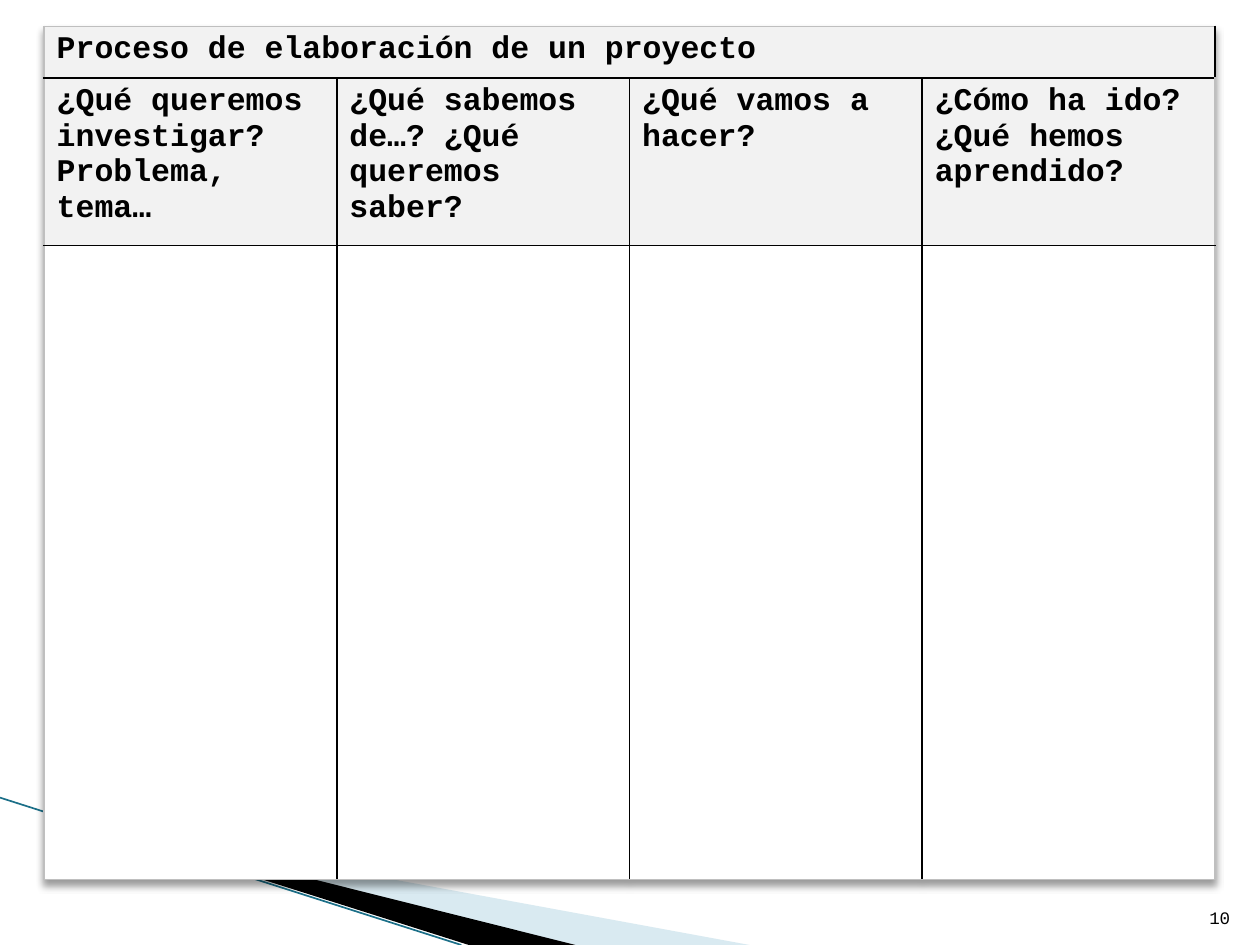
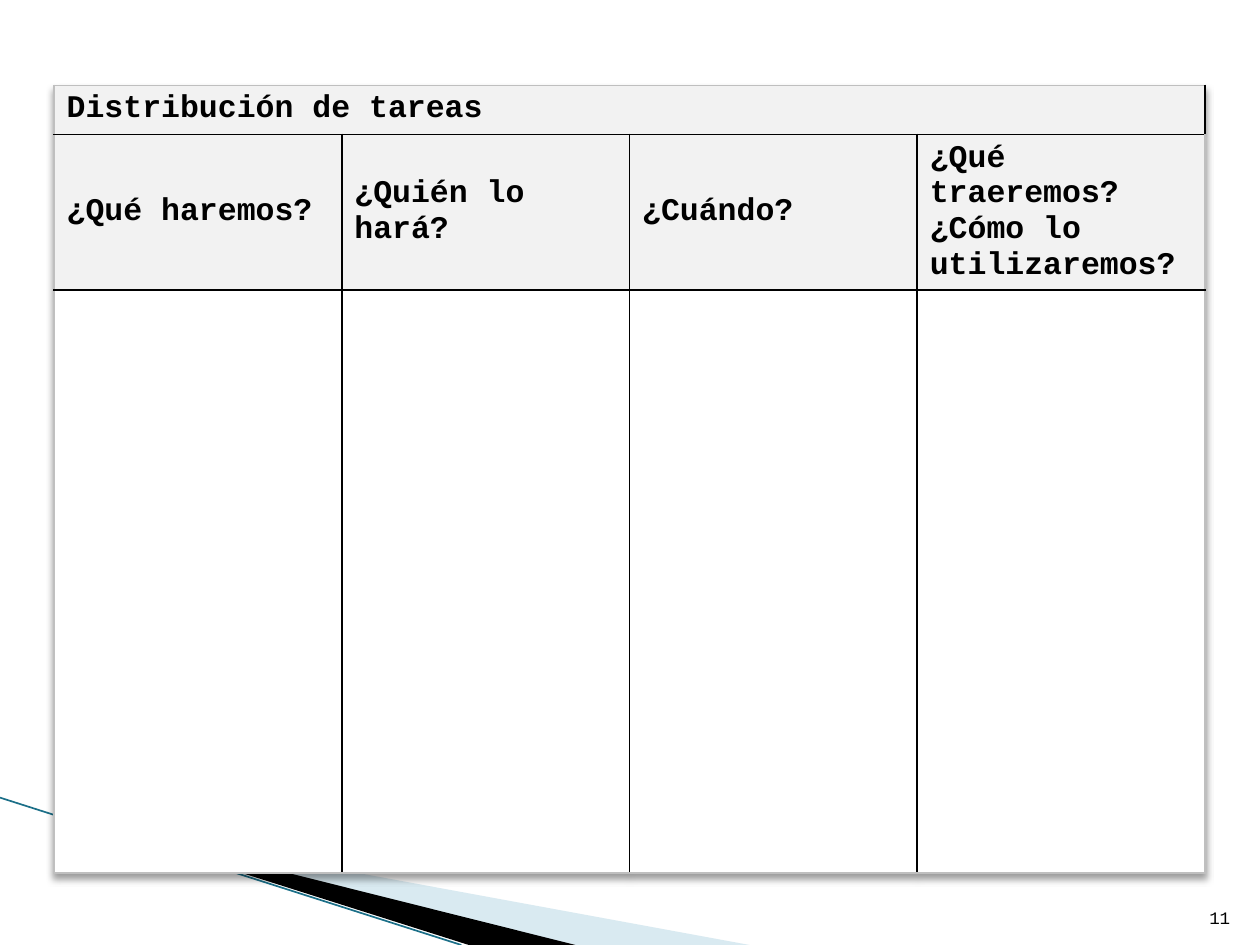
from lxml import etree
from pptx import Presentation
from pptx.dml.color import RGBColor
from pptx.enum.shapes import MSO_CONNECTOR as Connector
from pptx.enum.text import MSO_ANCHOR as Anchor, PP_ALIGN as Align
from pptx.oxml import parse_xml
from pptx.oxml.ns import nsdecls, qn
from pptx.util import Cm, Pt

COLORS = {
    "text": "000000",
    "header": "F2F2F2",
    "body": "FFFFFF",
    "rule": "000000",
    "edge": "BFBFBF",
    "pale_band": "A0CBDC",
    "dark_band": "000000",
    "band_line": "1B6F88",
}
FONT = "Courier New"
BLANK_LAYOUT = 6

TABLES = [
    {
        "title": "Proceso de elaboración de un proyecto",
        "questions": [
            "¿Qué queremos investigar? Problema, tema…",
            "¿Qué sabemos de…? ¿Qué queremos saber?",
            "¿Qué vamos a hacer?",
            "¿Cómo ha ido? ¿Qué hemos aprendido?",
        ],
        "left": 0.89, "top": 0.53, "column_width": 5.9,
        "row_heights": [1.04, 3.38, 12.78],
        "anchor": Anchor.TOP,
    },
    {
        "title": "Distribución de tareas",
        "questions": [
            "¿Qué haremos?",
            "¿Quién lo hará?",
            "¿Cuándo?",
            "¿Qué traeremos? ¿Cómo lo utilizaremos?",
        ],
        "left": 1.09, "top": 1.72, "column_width": 5.8,
        "row_heights": [0.99, 3.14, 11.75],
        "anchor": Anchor.MIDDLE,
    },
]


def rgb(name):
    return RGBColor.from_string(COLORS[name])


class Deck:
    """Holds the shared style and the slide being filled."""

    def __init__(self):
        self.presentation = Presentation()
        self.presentation.slide_width = Cm(25.4)
        self.presentation.slide_height = Cm(19.05)
        self.slide = None

    def add_slide(self):
        layout = self.presentation.slide_layouts[BLANK_LAYOUT]
        self.slide = self.presentation.slides.add_slide(layout)

    def style_text(self, paragraph, size, bold=False):
        font = paragraph.font
        font.name, font.size, font.bold = FONT, Pt(size), bold
        font.color.rgb = rgb("text")

    def band(self, points, color, opacity=100):
        (start_x, start_y), *others = [(Cm(x), Cm(y)) for x, y in points]
        builder = self.slide.shapes.build_freeform(start_x, start_y)
        builder.add_line_segments(others, close=True)
        shape = builder.convert_to_shape()
        shape.shadow.inherit = False
        shape.fill.solid()
        shape.fill.fore_color.rgb = rgb(color)
        shape.line.fill.background()
        if opacity < 100:
            fill_color = shape.element.spPr.find(".//" + qn("a:srgbClr"))
            alpha = etree.SubElement(fill_color, qn("a:alpha"))
            alpha.set("val", str(opacity * 1000))
        return shape

    def line(self, start, end, color, width):
        connector = self.slide.shapes.add_connector(
            Connector.STRAIGHT, *(Cm(value) for value in (*start, *end)))
        connector.line.color.rgb = rgb(color)
        connector.line.width = Pt(width)
        etree.SubElement(connector.element.spPr, qn("a:effectLst"))
        return connector

    def corner_bands(self):
        """Draw the corner decoration once and hand it to the slide master."""
        parts = [
            self.band([(1.4, 16.53), (15.11, 19.05), (11.58, 19.05)],
                      "pale_band", opacity=40),
            self.band([(1.35, 16.48), (11.6, 19.05), (9.45, 19.05)],
                      "dark_band"),
            self.line((0, 16.08), (9.3, 19.05), "band_line", 0.95),
        ]
        master_tree = self.presentation.slide_master.element.cSld.spTree
        for part in parts:
            master_tree.append(part.element)

    def borders(self, cell, edges):
        properties = cell._tc.get_or_add_tcPr()
        for side, color in zip("LRTB", edges):
            properties.append(parse_xml(
                f'<a:ln{side} {nsdecls("a")} w="{Pt(1)}"><a:solidFill>'
                f'<a:srgbClr val="{COLORS[color]}"/></a:solidFill></a:ln{side}>'))

    def table_shadow(self, table):
        table._tbl.tblPr.insert(0, parse_xml(
            f'<a:effectLst {nsdecls("a")}>'
            '<a:outerShdw blurRad="50800" dist="38100" dir="5400000" algn="t">'
            '<a:srgbClr val="000000"><a:alpha val="40000"/></a:srgbClr>'
            '</a:outerShdw></a:effectLst>'))

    def planning_table(self, title, questions, left, top, column_width,
                       row_heights, anchor):
        last_row, last_column = len(row_heights) - 1, len(questions) - 1
        table = self.slide.shapes.add_table(
            len(row_heights), len(questions), Cm(left), Cm(top),
            Cm(column_width * len(questions)), Cm(sum(row_heights))).table
        table.first_row = table.horz_banding = False
        self.table_shadow(table)
        for column in table.columns:
            column.width = Cm(column_width)
        for row, height in zip(table.rows, row_heights):
            row.height = Cm(height)

        table.cell(0, 0).merge(table.cell(0, last_column))
        table.cell(0, 0).text = title
        for column_index, question in enumerate(questions):
            table.cell(1, column_index).text = question

        for row_index, row in enumerate(table.rows):
            for column_index, cell in enumerate(row.cells):
                at_edge = (column_index == 0, column_index == last_column,
                           row_index == 0, row_index == last_row)
                self.borders(cell, ["edge" if outer else "rule"
                                    for outer in at_edge])
                cell.fill.solid()
                cell.fill.fore_color.rgb = rgb(
                    "body" if row_index == last_row else "header")
                cell.vertical_anchor = anchor if row_index == 1 else Anchor.TOP
                self.style_text(cell.text_frame.paragraphs[0], 18, bold=True)

    def page_number(self, number):
        box = self.slide.shapes.add_textbox(
            Cm(24.03), Cm(17.81), Cm(1.02), Cm(1.02))
        frame = box.text_frame
        frame.word_wrap = True
        frame.vertical_anchor = Anchor.BOTTOM
        paragraph = frame.paragraphs[0]
        paragraph.text = str(number)
        paragraph.alignment = Align.RIGHT
        self.style_text(paragraph, 10)


def main():
    deck = Deck()
    for number, content in enumerate(TABLES, start=10):
        deck.add_slide()
        if number == 10:
            deck.corner_bands()
        deck.planning_table(**content)
        deck.page_number(number)
    deck.presentation.save("out.pptx")


if __name__ == "__main__":
    main()
